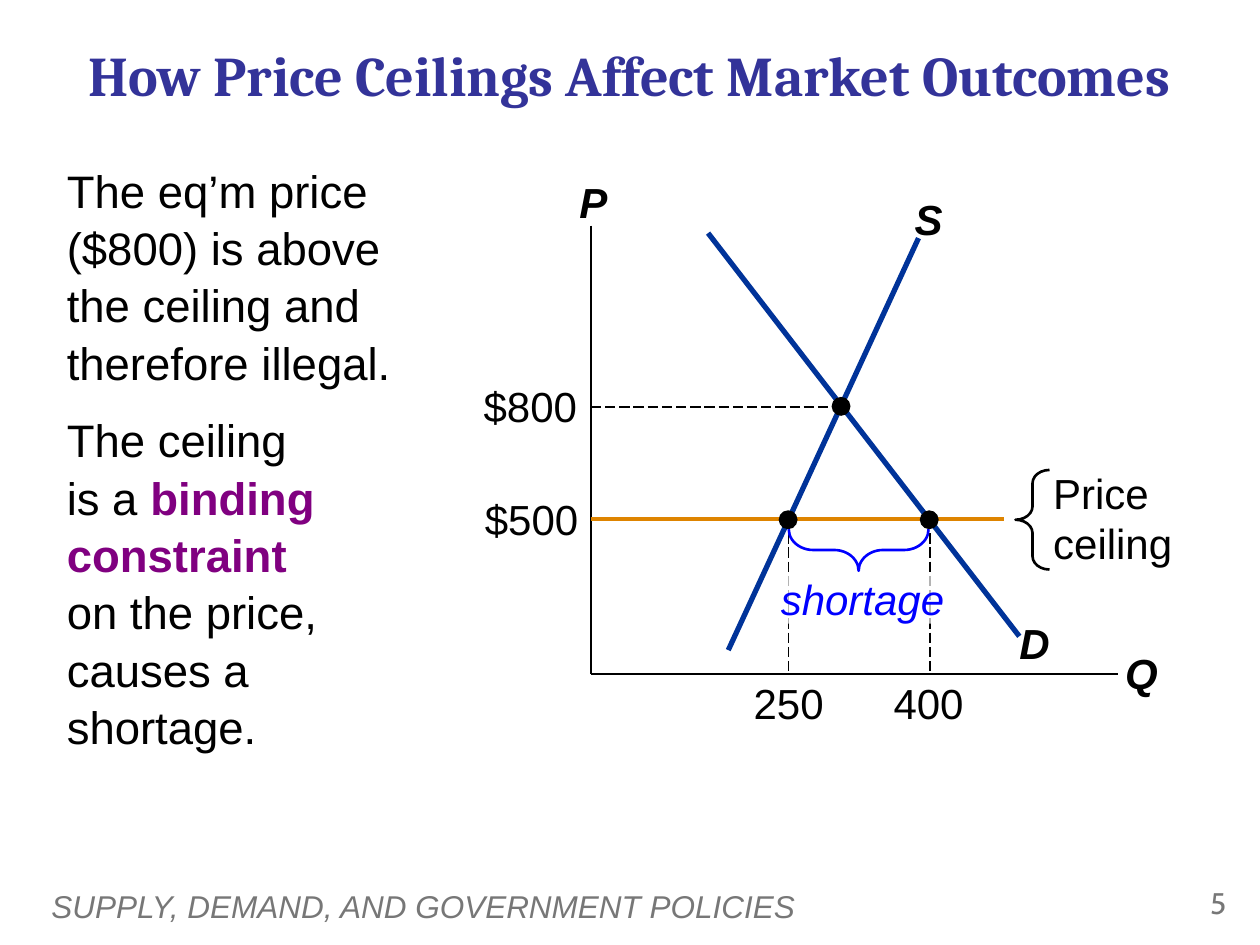
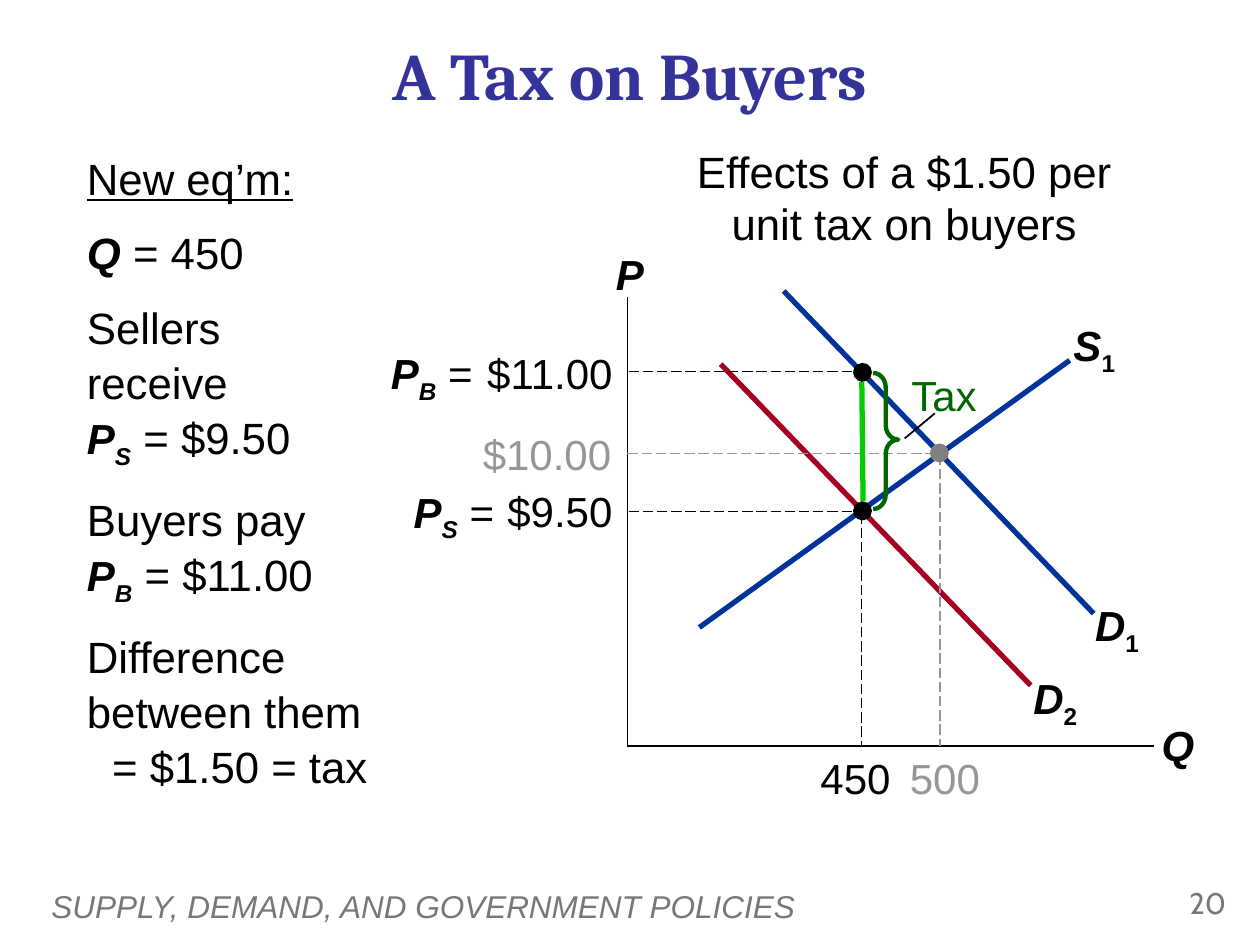
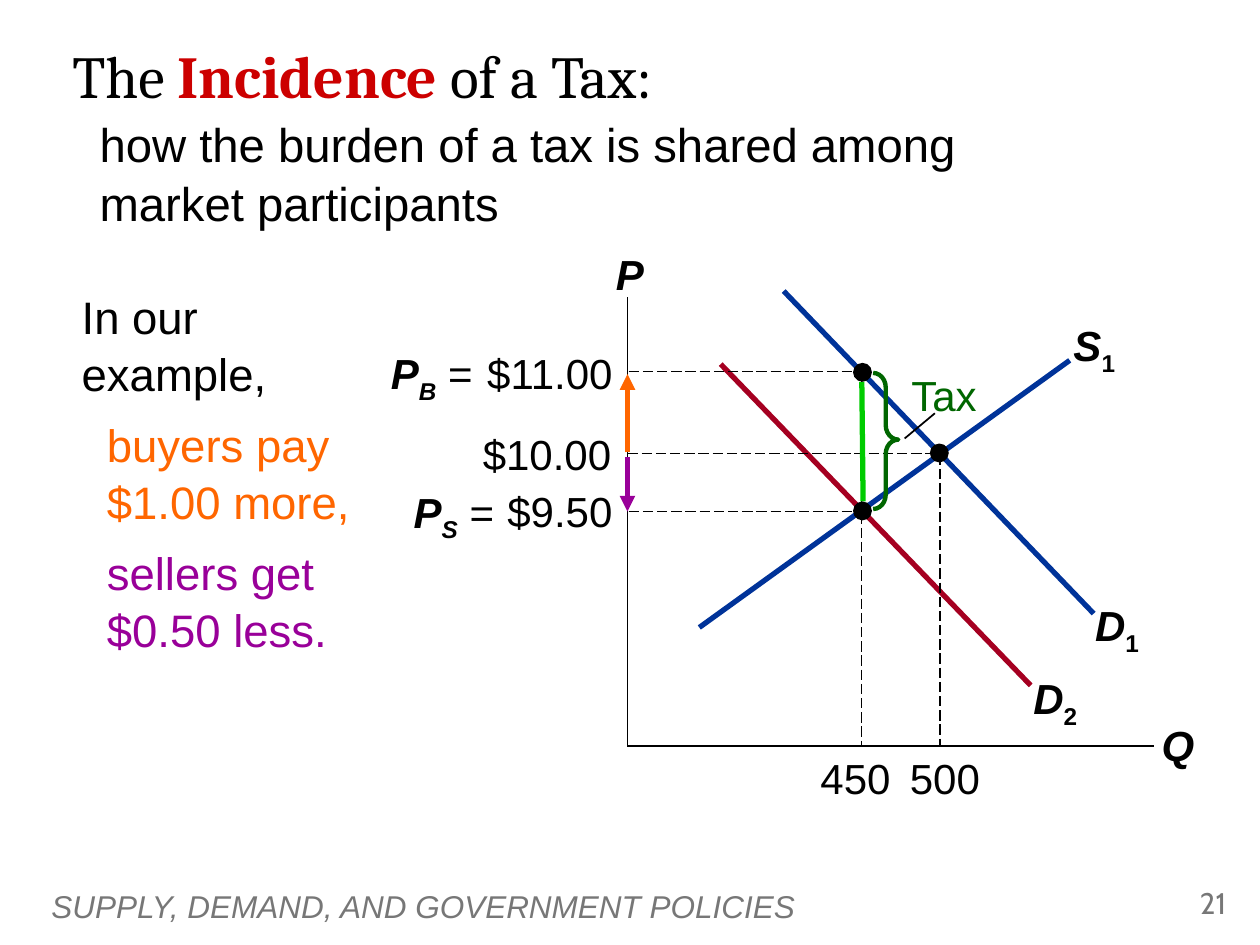
"""Build three economics slides on price ceilings and the incidence of a tax."""
from dataclasses import dataclass

from lxml import etree
from pptx import Presentation
from pptx import util as u
from pptx.dml.color import RGBColor
from pptx.enum import dml, shapes, text
from pptx.oxml.ns import qn


@dataclass(frozen=True)
class Theme:
    sans: str = "Arial"
    serif: str = "Cambria"
    number: str = "Cabin"
    ink: str = "000000"
    title: str = "333399"
    footer: str = "777777"
    curve: str = "003399"
    shifted: str = "A50021"
    ceiling: str = "DE8400"
    shortage: str = "0000FF"
    term: str = "800080"
    incidence: str = "CC0000"
    muted: str = "969696"
    muted_dot: str = "808080"
    tax: str = "006600"
    wedge: str = "00CC00"
    buyers: str = "FF6600"
    sellers: str = "990099"
    label_size: int = 24
    footer_size: int = 18
    number_size: int = 17
    axis: float = 1
    guide: float = 0.75
    thick: float = 3


theme = Theme()
LEFT, CENTER, RIGHT = text.PP_ALIGN.LEFT, text.PP_ALIGN.CENTER, text.PP_ALIGN.RIGHT
TOP, MIDDLE = text.MSO_ANCHOR.TOP, text.MSO_ANCHOR.MIDDLE
PADDED, TIGHT, PRICE = (0.1, 0.05, 0.1, 0.05), (0, 0, 0, 0), (0, 0, 0.1, 0)
SYMBOL = {"bold": True, "italic": True, "size": theme.label_size}
SYMBOL_SUB = {**SYMBOL, "baseline": -25000}
INDEX_SUB = {**SYMBOL_SUB, "italic": False}


def write(box, paragraphs, align=LEFT, anchor=TOP, inset=PADDED, spacing=1, gap=0, indents=(), **base):
    """Fill a box with paragraphs, each a string or a list of (words, format) spans."""
    frame = box.text_frame
    margins = zip(("margin_left", "margin_top", "margin_right", "margin_bottom"), map(u.Inches, inset))
    layout = {"word_wrap": True, "auto_size": text.MSO_AUTO_SIZE.NONE, "vertical_anchor": anchor, **dict(margins)}
    for name, value in layout.items():
        setattr(frame, name, value)
    for index, spans in enumerate(paragraphs):
        para = frame.add_paragraph() if index else frame.paragraphs[0]
        look = {"alignment": align, "line_spacing": spacing, "space_before": u.Pt(gap if index else 0)}
        for name, value in look.items():
            setattr(para, name, value)
        properties = para._p.get_or_add_pPr()
        properties.set("marL", str(u.Inches(0.2 if index in indents else 0)))
        properties.set("indent", "0")
        etree.SubElement(properties, qn("a:buNone"))
        for words, changes in [(spans, {})] if isinstance(spans, str) else spans:
            style = {"name": theme.sans, "size": theme.label_size, "color": theme.ink, **base, **changes}
            color, baseline = style.pop("color"), style.pop("baseline", None)
            style["size"] = u.Pt(style["size"])
            for order, line in enumerate(words.split("\n")):
                if order:
                    para.add_line_break()
                if not line:
                    continue
                span = para.add_run()
                span.text = line
                for name, value in style.items():
                    setattr(span.font, name, value)
                span.font.color.rgb = RGBColor.from_string(color)
                if baseline:
                    span._r.get_or_add_rPr().set("baseline", str(baseline))
    return frame


def tax_market(middle, middle_dot):
    """Describe the taxed market, with the untaxed equilibrium in the given colours."""
    lines = [
        (5.55, 4.98, 8.49, 2.86, theme.curve, theme.thick),
        (6.22, 2.31, 8.68, 4.87, theme.curve, theme.thick),
        (5.72, 2.89, 8.18, 5.44, theme.shifted, theme.thick),
        (4.98, 3.6, 7.46, 3.6, middle, theme.guide),
        (7.46, 3.61, 7.46, 5.92, middle, theme.guide),
        (4.99, 2.95, 6.85, 2.95, theme.ink, theme.guide),
        (4.99, 4.06, 6.85, 4.06, theme.ink, theme.guide),
        (6.84, 2.95, 6.84, 5.91, theme.ink, theme.guide),
        (7.18, 3.48, 7.42, 3.28, theme.ink, theme.axis),
        (6.85, 3.98, 6.84, 3.03, theme.wedge, theme.thick),
    ]
    labels = [
        (3.7, 3.4, 1.25, 0.4, "$10.00", RIGHT, PRICE, middle),
        (7.18, 5.97, 0.64, 0.4, "500", CENTER, TIGHT, middle),
        (3.68, 2.76, 1.28, 0.4, "$11.00", RIGHT, PRICE, theme.ink),
        (3.93, 3.85, 1.03, 0.4, "$9.50", RIGHT, PRICE, theme.ink),
        (6.47, 5.97, 0.64, 0.4, "450", CENTER, TIGHT, theme.ink),
        (7.08, 2.88, 0.77, 0.5, "Tax", RIGHT, PADDED, theme.tax),
    ]
    for left, top, letter, index in [(8.35, 2.49, "S", "1"), (8.53, 4.71, "D", "1"), (8.04, 5.29, "D", "2")]:
        labels.append((left, top, 0.67, 0.5, [(letter, SYMBOL), (index, INDEX_SUB)], CENTER, PADDED, theme.ink))
    for left, top, side in [(2.97, 2.71, "B"), (3.14, 3.81, "S")]:
        spans = [("P", SYMBOL), (side, SYMBOL_SUB), (" =", {})]
        labels.append((left, top, 0.88, 0.5, spans, RIGHT, PADDED, theme.ink))
    return {
        "origin": (4.98, 5.92),
        "lines": lines,
        "braces": [(6.93, 2.96, 0.2, 1.08, "RIGHT_BRACE", 0, (0.57, 0.49), theme.tax, 2.5)],
        "dots": [(7.38, 3.52, middle_dot), (6.77, 2.88, theme.ink), (6.77, 3.98, theme.ink)],
        "labels": labels,
    }


ceiling_market = {
    "origin": (4.69, 5.35),
    "lines": [
        (5.62, 1.85, 8.09, 5.05, theme.curve, theme.thick),
        (5.78, 5.16, 7.29, 1.89, theme.curve, theme.thick),
        (4.69, 3.23, 6.68, 3.23, theme.ink, theme.guide),
        (4.69, 4.12, 7.97, 4.12, theme.ceiling, 2.25),
        (6.26, 4.12, 6.26, 5.34, theme.ink, theme.guide),
        (7.38, 4.12, 7.38, 5.34, theme.ink, theme.guide),
    ],
    "braces": [
        (8.06, 3.73, 0.27, 0.79, "LEFT_BRACE", 0, (0.39, 0.5), theme.ink, 1.5),
        (6.65, 3.81, 0.33, 1.11, "LEFT_BRACE", 270, (0.59, 0.5), theme.shortage, 1.5),
    ],
    "dots": [(6.6, 3.15, theme.ink), (6.18, 4.05, theme.ink), (7.3, 4.05, theme.ink)],
    "labels": [
        (7.93, 4.85, 0.56, 0.5, [("D", SYMBOL)], CENTER, PADDED, theme.ink),
        (7.09, 1.49, 0.56, 0.5, [("S", SYMBOL)], CENTER, PADDED, theme.ink),
        (3.56, 3.02, 1.02, 0.4, "$800", RIGHT, TIGHT, theme.ink),
        (3.57, 3.92, 1.02, 0.4, "$500", RIGHT, TIGHT, theme.ink),
        (8.26, 3.66, 1.22, 0.9, "Price \nceiling", LEFT, PADDED, theme.ink),
        (5.78, 5.38, 0.96, 0.4, "250", CENTER, TIGHT, theme.ink),
        (6.89, 5.38, 0.96, 0.4, "400", CENTER, TIGHT, theme.ink),
    ],
}
incidence_market = tax_market(theme.ink, theme.ink)
incidence_market["lines"] += [
    (4.98, 3.59, 4.98, 2.97, theme.buyers, theme.thick, "tailEnd"),
    (4.98, 4.06, 4.98, 3.63, theme.sellers, theme.thick, "headEnd"),
]

BINDING = {"bold": True, "color": theme.term}
slides = [
    {
        "number": "5",
        "title": [("How Price Ceilings Affect Market Outcomes", {})],
        "title_at": (0, 0.23, 10, 0.71),
        "title_format": {"size": 32, "bold": True, "color": theme.title},
        "body": [
            "The eq’m price ($800) is above the ceiling and therefore illegal.",
            [("The ceiling \nis a ", {}), ("binding constraint \n", BINDING),
             ("on the price, causes a shortage.", {})],
        ],
        "body_at": (0.43, 1.22, 2.86, 4.97),
        "body_size": 26,
        "market": ceiling_market,
    },
    {
        "number": "20",
        "title": [("A Tax on Buyers", {})],
        "title_at": (0, 0.23, 10, 0.71),
        "title_format": {"size": 38, "bold": True, "color": theme.title},
        "body": [
            [("New eq’m:", {"underline": True})],
            [("Q", {**SYMBOL, "size": 25}), (" = 450", {})],
            [("Sellers \nreceive \n", {}), ("P", SYMBOL), ("S", SYMBOL_SUB), (" = $9.50", {})],
            [("Buyers pay \n", {}), ("P", SYMBOL), ("B", SYMBOL_SUB), (" = $11.00", {})],
            "Difference between them",
            "= $1.50 = tax",
        ],
        "body_at": (0.59, 1.13, 2.87, 5.32),
        "body_size": 25,
        "indents": (5,),
        "market": tax_market(theme.muted, theme.muted_dot),
    },
    {
        "number": "21",
        "title": [("The ", {}), ("Incidence", {"bold": True, "color": theme.incidence}), (" of a Tax:", {})],
        "title_at": (0, 0.24, 5.75, 0.71),
        "title_format": {"size": 34, "bold": False},
        "body": ["how the burden of a tax is shared among \nmarket participants"],
        "body_at": (0.69, 0.84, 7.11, 1.07),
        "body_size": 27,
        "market": incidence_market,
    },
]

deck = Presentation()
deck.slide_width, deck.slide_height = u.Inches(10), u.Inches(7.5)
pages = []
for slide in slides:
    page = deck.slides.add_slide(deck.slide_layouts[1])
    pages.append(page)
    title, body = page.shapes.title, page.placeholders[1]
    for holder, place in ((title, slide["title_at"]), (body, slide["body_at"])):
        holder.left, holder.top, holder.width, holder.height = map(u.Inches, place)
    write(title, [slide["title"]], CENTER, MIDDLE, name=theme.serif, **slide["title_format"])
    indents, size = slide.get("indents", ()), slide["body_size"]
    frame = write(body, slide["body"], spacing=1.05, gap=0.45 * size, indents=indents, size=size)
    for index in indents:
        frame.paragraphs[index].space_before = u.Pt(0)

    footer = page.shapes.add_textbox(*map(u.Inches, (0.31, 6.99, 8.02, 0.4)))
    write(footer, ["SUPPLY, DEMAND, AND GOVERNMENT POLICIES"], anchor=MIDDLE,
          size=theme.footer_size, color=theme.footer, italic=True)
    number = page.shapes.add_textbox(*map(u.Inches, (9.08, 6.97, 0.75, 0.4)))
    write(number, [slide["number"]], RIGHT, name=theme.number, size=theme.number_size, color=theme.footer)

    market = slide["market"]
    x, y = market["origin"]
    axes = [(x, y - 3.56, x, y, theme.ink, theme.axis), (x, y, x + 4.18, y, theme.ink, theme.axis)]
    axis_labels = [
        (x - 0.21, y - 4, 0.46, 0.5, [("P", SYMBOL)], CENTER, PADDED, theme.ink),
        (x + 4.12, y - 0.26, 0.5, 0.5, [("Q", SYMBOL)], CENTER, PADDED, theme.ink),
    ]
    for x1, y1, x2, y2, color, weight, *arrow in axes + market["lines"]:
        line = page.shapes.add_connector(shapes.MSO_CONNECTOR.STRAIGHT, *map(u.Inches, (x1, y1, x2, y2)))
        line.line.color.rgb = RGBColor.from_string(color)
        line.line.width = u.Pt(weight)
        if weight == theme.guide:
            line.line.dash_style = dml.MSO_LINE.LONG_DASH
        for end in arrow:
            etree.SubElement(line.line._get_or_add_ln(), qn("a:" + end), type="triangle")
        etree.SubElement(line._element.spPr, qn("a:effectLst"))
    for *place, kind, rotation, bends, color, weight in market["braces"]:
        brace = page.shapes.add_shape(shapes.MSO_SHAPE[kind], *map(u.Inches, place))
        brace.shadow.inherit = False
        brace.rotation = rotation
        brace.adjustments[0], brace.adjustments[1] = bends
        brace.fill.background()
        brace.line.color.rgb = RGBColor.from_string(color)
        brace.line.width = u.Pt(weight)
    for left, top, color in market["dots"]:
        dot = page.shapes.add_shape(shapes.MSO_SHAPE.OVAL, *map(u.Inches, (left, top, 0.15, 0.15)))
        dot.shadow.inherit = False
        dot.fill.solid()
        dot.fill.fore_color.rgb = RGBColor.from_string(color)
        dot.line.fill.background()
    for *place, spans, align, inset, color in axis_labels + market["labels"]:
        label = page.shapes.add_textbox(*map(u.Inches, place))
        write(label, [spans], align, inset=inset, color=color)

ceiling_page, buyers_page, incidence_page = pages
shortage = ceiling_page.shapes.add_shape(shapes.MSO_SHAPE.RECTANGLE, *map(u.Inches, (6.17, 4.55, 1.35, 0.4)))
shortage.shadow.inherit = False
shortage.line.fill.background()
shortage.fill.solid()
shortage.fill.fore_color.rgb = RGBColor.from_string("FFFFFF")
white = shortage._element.spPr.find(qn("a:solidFill"))[0]
etree.SubElement(white, qn("a:alpha"), val="70000")
write(shortage, ["shortage"], CENTER, inset=TIGHT, color=theme.shortage, italic=True)

caption = buyers_page.shapes.add_textbox(*map(u.Inches, (5.27, 1.1, 3.81, 0.93)))
write(caption, ["Effects of a $1.50 per unit tax on buyers"], CENTER, size=25)

example = incidence_page.shapes.add_textbox(*map(u.Inches, (0.55, 2.22, 2.43, 3.42)))
burdens = [
    "In our example,",
    [("buyers pay \n$1.00 more,", {"color": theme.buyers})],
    [("sellers get \n$0.50 less.", {"color": theme.sellers})],
]
write(example, burdens, spacing=1.05, gap=7.8, indents=(1, 2), size=26)

deck.save("out.pptx")
